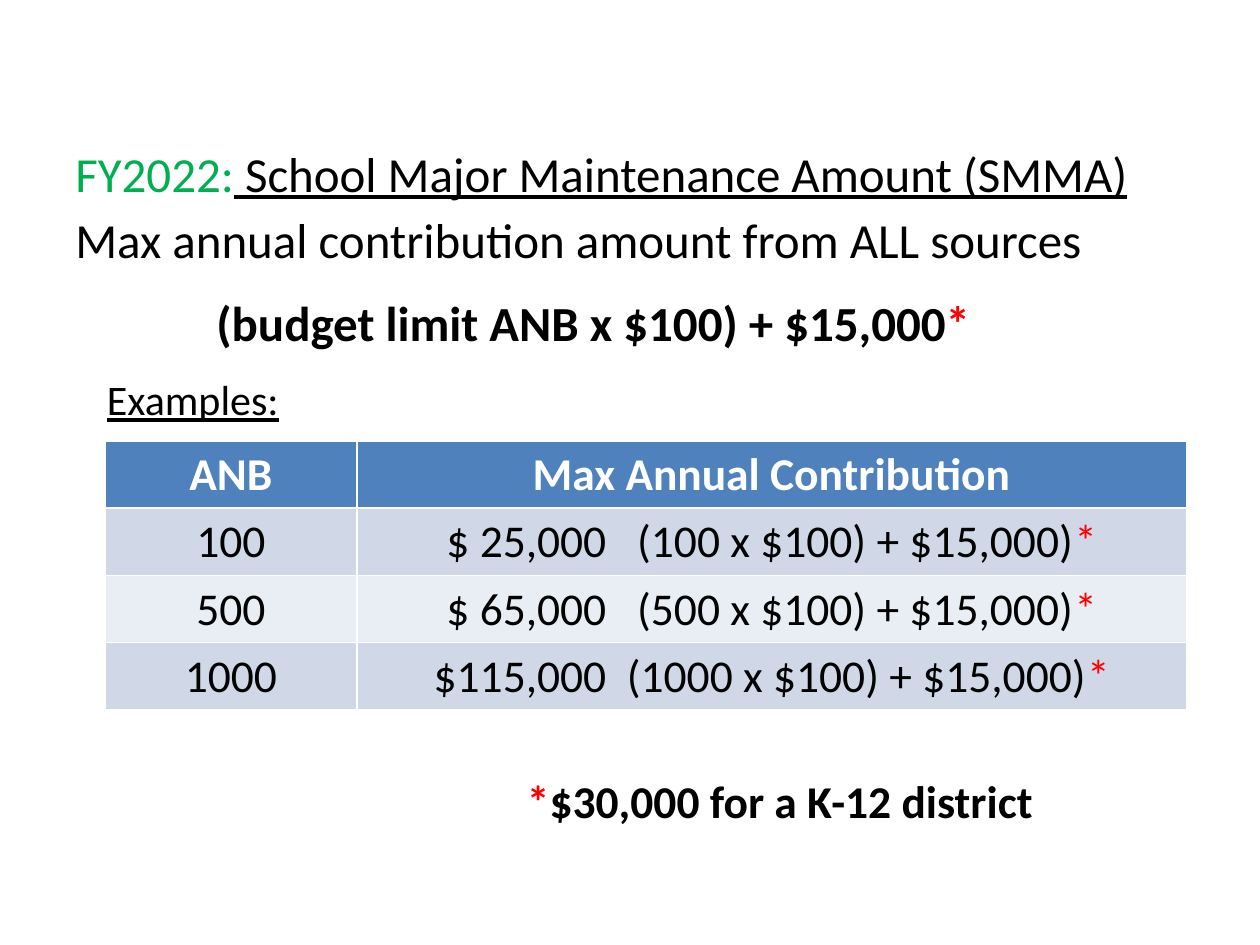
from pptx import Presentation
from pptx.dml.color import RGBColor
from pptx.enum.text import MSO_ANCHOR, PP_ALIGN
from pptx.util import Inches, Pt

CENTER = PP_ALIGN.CENTER
TOP = MSO_ANCHOR.TOP
FONT = "Calibri"
COLORS = {
    "text": "000000", "year": "00B050", "note": "FF0000", "white": "FFFFFF",
    "header": "4F81BD", "odd": "D0D8E8", "even": "E9EDF4",
}
BLANK_LAYOUT = 6
GRID_COLUMNS, GRID_ROWS = 120, 90
SLIDE_WIDTH, SLIDE_HEIGHT = Inches(10), Inches(7.5)
STAR = ("*", {"color": "note"})


def columns(count):
    return round(SLIDE_WIDTH * count / GRID_COLUMNS)


def rows(count):
    return round(SLIDE_HEIGHT * count / GRID_ROWS)


def place(box):
    """Turn a (left, top, width, height) grid box into slide lengths."""
    left, top, width, height = box
    return columns(left), rows(top), columns(width), rows(height)


def write_runs(paragraph, runs, **shared):
    """Add (text, format) runs; each run's format overrides the shared one."""
    for text, own in runs:
        values = {"name": FONT, "color": "text", **shared, **own}
        color = values.pop("color")
        run = paragraph.add_run()
        run.text = text
        run.font.color.rgb = RGBColor.from_string(COLORS[color])
        for name, value in values.items():
            setattr(run.font, name, value)


def add_text_frame(slide, box, wrap=True):
    frame = slide.shapes.add_textbox(*place(box)).text_frame
    frame.word_wrap = wrap
    frame.vertical_anchor = TOP
    return frame


def add_rule(slide, box):
    """Place the heading, its explanation and the indented formula."""
    frame = add_text_frame(slide, box)
    frame.margin_top = Inches(0.08)
    lines = [
        ([("FY2022:", {"color": "year"}),
          (" School Major Maintenance Amount (SMMA)", {"underline": True})], {}),
        ([("Max annual contribution amount from ALL sources", {})], {}),
        ([("(budget limit ANB x $100) + $15,000", {"bold": True}),
          ("*", {"color": "note", "bold": True})],
         {"space_before": Pt(10), "level": 2}),
    ]
    for index, (runs, layout) in enumerate(lines):
        paragraph = frame.add_paragraph() if index else frame.paragraphs[0]
        paragraph.line_spacing = 1.12
        for name, value in layout.items():
            setattr(paragraph, name, value)
        if paragraph.level:
            properties = paragraph._p.get_or_add_pPr()
            properties.set("marL", str(Inches(1.12)))
            properties.set("indent", "0")
        write_runs(paragraph, runs, size=Pt(28))


def add_label(slide, box, runs, wrap=True, **shared):
    frame = add_text_frame(slide, box, wrap)
    write_runs(frame.paragraphs[0], runs, **shared)


def add_examples_table(slide, box):
    contents = [
        ("ANB", "Max Annual Contribution"),
        ("100", "$ 25,000   (100 x $100) + $15,000)"),
        ("500", "$ 65,000   (500 x $100) + $15,000)"),
        ("1000", "$115,000  (1000 x $100) + $15,000)"),
    ]
    table = slide.shapes.add_table(len(contents), 2, *place(box)).table
    anb_width = 24
    table.columns[0].width = columns(anb_width)
    table.columns[1].width = columns(box[2] - anb_width)
    for row, texts in enumerate(contents):
        is_header = row == 0
        fill = "header" if is_header else ("even", "odd")[row % 2]
        for column, text in enumerate(texts):
            cell = table.cell(row, column)
            cell.fill.solid()
            cell.fill.fore_color.rgb = RGBColor.from_string(COLORS[fill])
            paragraph = cell.text_frame.paragraphs[0]
            paragraph.alignment = CENTER
            runs = [(text, {"color": "white" if is_header else "text"})]
            if column and not is_header:
                runs.append(STAR)
            write_runs(paragraph, runs, size=Pt(26), bold=is_header)


def main():
    presentation = Presentation()
    presentation.slide_width = SLIDE_WIDTH
    presentation.slide_height = SLIDE_HEIGHT
    slide = presentation.slides.add_slide(presentation.slide_layouts[BLANK_LAYOUT])
    add_rule(slide, (6, 12, 108, 76))
    add_label(slide, (9, 35, 19, 6), [("Examples:", {})],
              wrap=False, size=Pt(24), underline=True)
    add_examples_table(slide, (10, 42, 103, 25.6))
    add_label(slide, (49, 73, 52, 6.5), [STAR, ("$30,000 for a K-12 district", {})],
              size=Pt(26), bold=True)
    presentation.save("out.pptx")


if __name__ == "__main__":
    main()
